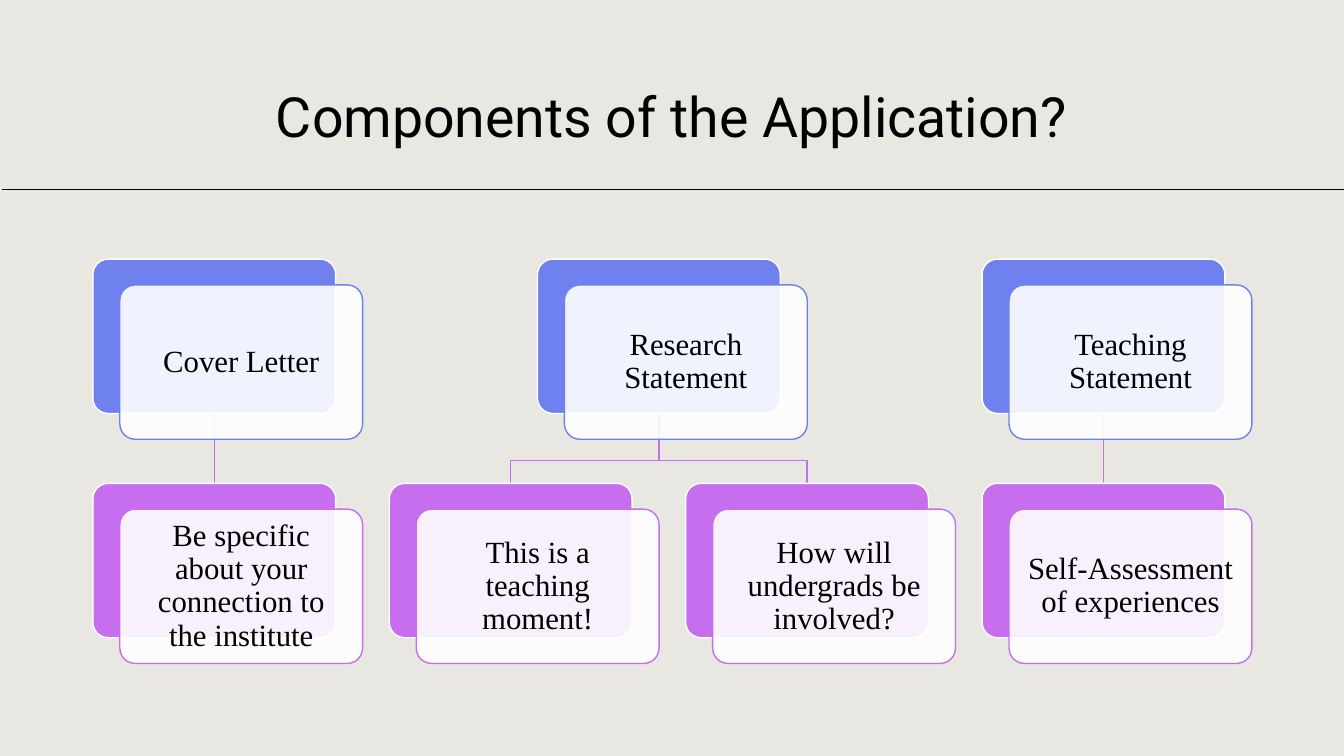
from lxml import etree
from pptx import Presentation
from pptx import util as u
from pptx.dml.color import RGBColor
from pptx.enum import shapes, text
from pptx.oxml.ns import qn

BLUE, PURPLE, WHITE, BLACK = "6E81EE", "C66EEE", "FFFFFF", "000000"
CARD_W, CARD_H = 6.12, 3.89
SHIFT_X, SHIFT_Y = 0.68, 0.65
FIRST_LEFT, COLUMN_STEP = 2.34, 7.47
PART_TOP, NOTE_TOP, BEND_Y = 6.53, 12.18, 11.61

COMPONENTS = [
    ("Cover Letter", ["Be specific about your connection to the institute"]),
    ("Research Statement", ["This is a teaching moment!", "How will undergrads be involved?"]),
    ("Teaching Statement", ["Self-Assessment of experiences"]),
]


def color(value):
    return RGBColor.from_string(value)


def write(frame, words, font="Times New Roman", size=22, anchor=text.MSO_ANCHOR.MIDDLE):
    frame.word_wrap = True
    frame.auto_size = text.MSO_AUTO_SIZE.NONE
    frame.vertical_anchor = anchor
    paragraph = frame.paragraphs[0]
    paragraph.alignment = text.PP_ALIGN.CENTER
    paragraph.line_spacing = 0.9
    run = paragraph.add_run()
    run.text = words
    run.font.name = font
    run.font.size = u.Pt(size)
    run.font.color.rgb = color(BLACK)


class Deck:
    def __init__(self):
        self.presentation = Presentation()
        self.presentation.slide_width = u.Cm(33.87)
        self.presentation.slide_height = u.Cm(19.05)
        self.slide = self.presentation.slides.add_slide(self.presentation.slide_layouts[5])
        self.slide.background.fill.solid()
        self.slide.background.fill.fore_color.rgb = color("E8E7E2")

    def title(self, words):
        heading = self.slide.shapes.title
        heading.left, heading.top = u.Cm(3.12), u.Cm(0.89)
        heading.width, heading.height = u.Cm(27.61), u.Cm(3)
        write(heading.text_frame, words, "Roboto", 39.6, text.MSO_ANCHOR.BOTTOM)

    def line(self, x1, y1, x2, y2, tint, weight):
        rule = self.slide.shapes.add_connector(
            shapes.MSO_CONNECTOR.STRAIGHT, u.Cm(x1), u.Cm(y1), u.Cm(x2), u.Cm(y2))
        rule.line.color.rgb = color(tint)
        rule.line.width = u.Pt(weight)
        etree.SubElement(rule.element.spPr, qn("a:effectLst"))
        return rule

    def panel(self, left, top, fill, outline, opacity=None):
        panel = self.slide.shapes.add_shape(
            shapes.MSO_SHAPE.ROUNDED_RECTANGLE,
            u.Cm(left), u.Cm(top), u.Cm(CARD_W), u.Cm(CARD_H))
        panel.adjustments[0] = 0.1
        panel.shadow.inherit = False
        panel.fill.solid()
        panel.fill.fore_color.rgb = color(fill)
        panel.line.color.rgb = color(outline)
        panel.line.width = u.Pt(1)
        if opacity:
            tone = panel.element.spPr.find(qn("a:solidFill"))[0]
            etree.SubElement(tone, qn("a:alpha")).set("val", str(opacity * 1000))
        return panel

    def card(self, column, top, words, tint):
        left = FIRST_LEFT + column * COLUMN_STEP
        back = self.panel(left, top, tint, WHITE)
        front = self.panel(left + SHIFT_X, top + SHIFT_Y, WHITE, tint, 90)
        frame = front.text_frame
        frame.margin_left = frame.margin_right = u.Cm(0.33)
        frame.margin_top = frame.margin_bottom = u.Cm(0.33)
        write(frame, words)
        return back

    def link(self, parent, child):
        start_x = parent.left + parent.width // 2
        start_y = parent.top + parent.height
        end_x = child.left + child.width // 2
        if start_x == end_x:
            branch = self.line(0, 0, 1, 1, PURPLE, 1)
            branch.begin_connect(parent, 2)
            branch.end_connect(child, 0)
        else:
            outline = self.slide.shapes.build_freeform(start_x, start_y)
            outline.add_line_segments(
                [(start_x, u.Cm(BEND_Y)), (end_x, u.Cm(BEND_Y)), (end_x, child.top)], close=False)
            branch = outline.convert_to_shape()
            branch.shadow.inherit = False
            branch.fill.background()
            branch.line.color.rgb = color(PURPLE)
            branch.line.width = u.Pt(1)
        self.slide.shapes.element.insert(2, branch.element)


def main():
    deck = Deck()
    deck.title("Components of the Application?")
    deck.line(33.87, 4.78, 0.05, 4.78, BLACK, 0.5)
    first = 0
    for component, notes in COMPONENTS:
        parent = deck.card(first + (len(notes) - 1) / 2, PART_TOP, component, BLUE)
        for column, note in enumerate(notes, first):
            deck.link(parent, deck.card(column, NOTE_TOP, note, PURPLE))
        first += len(notes)
    deck.presentation.save("out.pptx")


if __name__ == "__main__":
    main()
